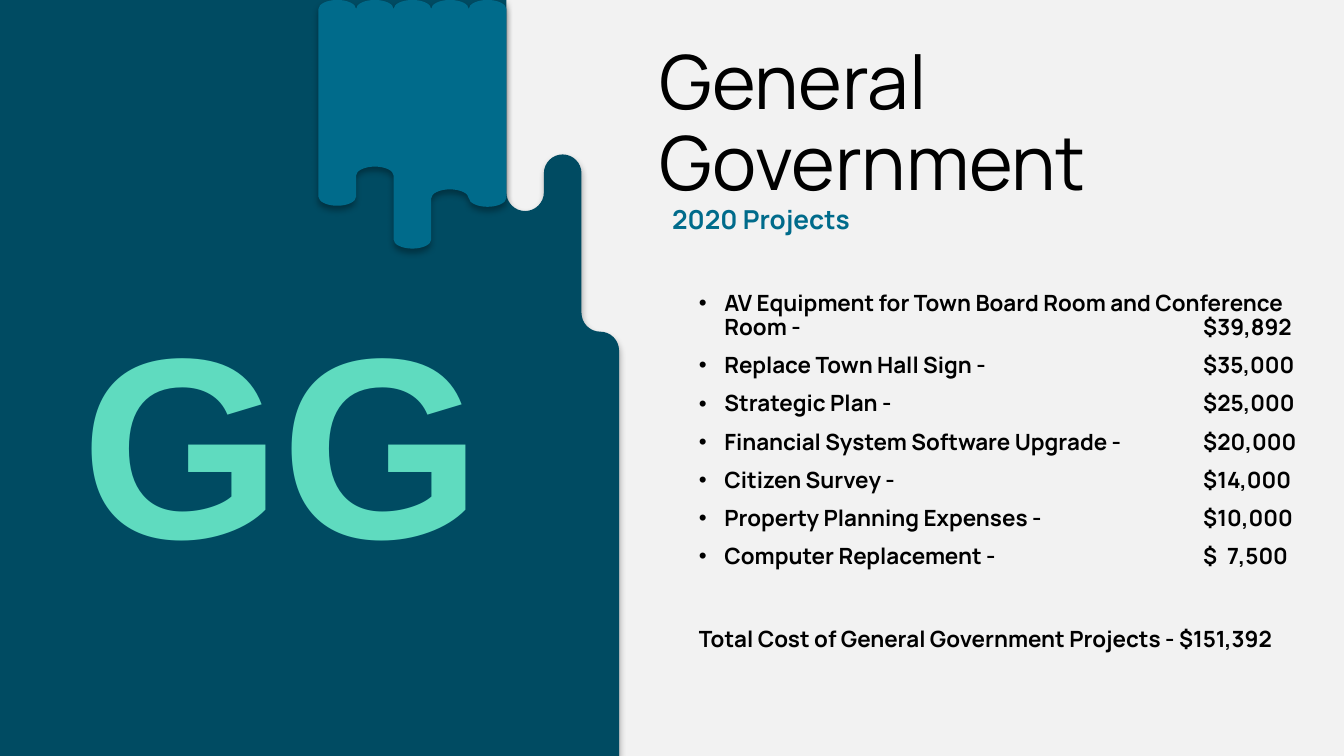
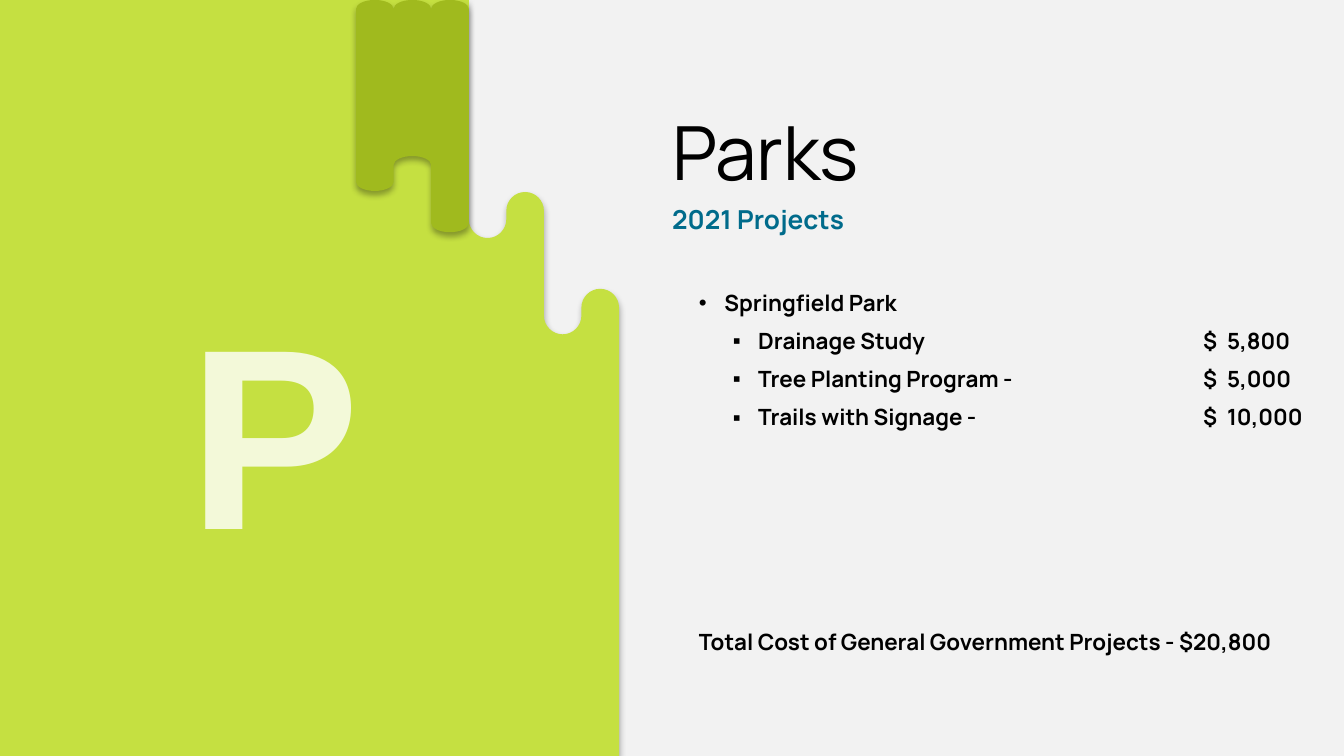
from dataclasses import dataclass

from lxml import etree
from pptx import Presentation
from pptx.dml.color import RGBColor as RGB
from pptx.enum.text import MSO_ANCHOR as ANCHOR, MSO_AUTO_SIZE as AUTO, PP_ALIGN as ALIGN
from pptx.oxml.ns import qn
from pptx.util import Cm, Pt


@dataclass(frozen=True)
class Theme:
    font: str = "Manrope"
    badge_font: str = "Arial"
    background: str = "F2F2F2"
    ink: str = "000000"
    accent: str = "006B8B"
    title: int = 40
    subtitle: int = 14
    body: int = 12
    badge: int = 138


THEME = Theme()
WIDTH, HEIGHT = 25.4, 14.29
COMPARISON = 4              # layout with a title, two headings and two lists
PANEL_RIGHT = 11.7
COLUMN = 0.71               # width of one drip
KAPPA = 0.55                # handle length of a quarter-ellipse curve
VALLEY, PEAK, STEP = "valley", "peak", "step"
AMOUNT_TABS = (9.53, 9.98)  # the amount, and its digits where they stand apart


def dome(x0, x1, tip, ry):
    """Half an ellipse from x0 to x1, as a line and two curves; a negative ry hangs down."""
    mid, rx, base = (x0 + x1) / 2, (x1 - x0) / 2, tip + ry
    shoulder, reach = base - KAPPA * ry, KAPPA * rx
    return [
        [(x0, base)],
        [(x0, shoulder), (mid - reach, tip), (mid, tip)],
        [(mid + reach, tip), (x1, shoulder), (x1, base)],
    ]


def add_outline(slide, segments, color):
    """Draw a closed outline; a segment of one point is a line, one of three a curve."""
    start, *rest = [(Cm(x), Cm(y)) for segment in segments for x, y in segment]
    builder = slide.shapes.build_freeform(*start)
    builder.add_line_segments(rest, close=True)
    sp = builder.convert_to_shape()
    lines = sp._element.iter(qn("a:lnTo"))
    bend(list(lines), segments[1:])
    sp.fill.solid()
    sp.fill.fore_color.rgb = RGB.from_string(color)
    sp.line.fill.background()
    add_shadow(sp)


def bend(lines, segments):
    """Join the three lines of each curved segment into one Bezier curve."""
    remaining = iter(lines)
    for segment in segments:
        first, *others = [next(remaining) for _ in segment]
        if others:
            curve = etree.Element(qn("a:cubicBezTo"))
            first.addprevious(curve)
            for line in (first, *others):
                curve.append(line[0])
                line.getparent().remove(line)


def add_shadow(sp):
    sp.shadow.inherit = False
    effects = sp._element.spPr.find(qn("a:effectLst"))
    shadow = etree.SubElement(effects, qn("a:outerShdw"), blurRad=str(Pt(3.5)),
                              dist=str(Pt(2.2)), dir="5400000", algn="t", rotWithShape="0")
    color = etree.SubElement(shadow, qn("a:srgbClr"), val="000000")
    etree.SubElement(color, qn("a:alpha"), val="32000")


def add_panel(slide, profile, color):
    """Left panel whose right edge follows the profile, one (kind, tip) per column."""
    left = PANEL_RIGHT - len(profile) * COLUMN
    radius = COLUMN / 2
    segments = [[(0, 0)], [(left, 0)]]
    for i, (kind, tip) in enumerate(profile):
        x0 = left + i * COLUMN
        valley = dome(x0, x0 + COLUMN, tip, -radius)
        peak = dome(x0, x0 + COLUMN, tip, radius)
        segments += {VALLEY: valley, PEAK: peak, STEP: valley[:2] + peak[2:]}[kind]
    add_outline(slide, segments + [[(PANEL_RIGHT, HEIGHT)], [(0, HEIGHT)]], color)
    return left


def add_drips(slide, right, tips, color, ry=0.17):
    """Paint drips ending at the given tips; every second one is hollowed upwards."""
    left = right - len(tips) * COLUMN
    edges = [left + i * COLUMN for i in range(len(tips) + 1)]
    segments = []
    for x0, x1 in zip(edges, edges[1:]):
        segments += dome(x0, x1, 0, ry)
    for i in reversed(range(len(tips))):
        segments += dome(edges[i + 1], edges[i], tips[i], ry if i % 2 else -ry)
    add_outline(slide, segments, color)


def write(p, text, size=THEME.body, color=THEME.ink, font=THEME.font, bold=True,
          spacing=0.9, before=0, bullet=None, margin=0, tabs=()):
    pPr = p._p.get_or_add_pPr()
    pPr.set("marL", str(Cm(margin)))
    pPr.set("indent", str(Cm(-0.48 if bullet else 0)))
    if bullet:
        etree.SubElement(pPr, qn("a:buFont"), typeface="Arial")
        etree.SubElement(pPr, qn("a:buChar"), char=bullet)
    else:
        etree.SubElement(pPr, qn("a:buNone"))
    if tabs:
        stops = etree.SubElement(pPr, qn("a:tabLst"))
        for pos in tabs:
            etree.SubElement(stops, qn("a:tab"), pos=str(Cm(pos)), algn="l")
    p.alignment = ALIGN.LEFT
    p.line_spacing = spacing
    p.space_before, p.space_after = Pt(before), Pt(0)
    r = p.add_run()
    r.text = text
    r.font.name, r.font.size, r.font.bold = font, Pt(size), bold
    r.font.color.rgb = RGB.from_string(color)


def place(sp, left, top, width, height, inset_y, inset_right=0):
    sp.left, sp.top, sp.width, sp.height = map(Cm, (left, top, width, height))
    tf = sp.text_frame
    tf.word_wrap, tf.auto_size, tf.vertical_anchor = True, AUTO.NONE, ANCHOR.TOP
    tf.margin_left, tf.margin_right = 0, Cm(inset_right)
    tf.margin_top = tf.margin_bottom = Cm(inset_y)
    return tf


def fill_list(tf, items):
    """Write (level, label, amount) items, with the amounts in a column of their own."""
    for i, (level, label, amount) in enumerate(items):
        p = tf.add_paragraph() if i else tf.paragraphs[0]
        p.level = level
        write(p, f"{label}\t{amount}" if amount else label, before=7.5 if i else 0,
              bullet="•▪"[level], margin=(0.48, 1.12)[level], tabs=AMOUNT_TABS)


def add_badge(slide, text, color, left, top, width):
    sp = slide.shapes.add_textbox(Cm(left), Cm(top), Cm(width), Cm(6.15))
    sp.text_frame.word_wrap = True
    write(sp.text_frame.paragraphs[0], text, size=THEME.badge, color=color,
          font=THEME.badge_font, spacing=1)


def add_project_slide(prs, title, title_box, subtitle, items, list_height, total, total_top):
    slide = prs.slides.add_slide(prs.slide_layouts[COMPARISON])
    ph = {sp.placeholder_format.idx: sp for sp in slide.placeholders}
    ph[4]._element.getparent().remove(ph[4]._element)
    write(place(ph[0], *title_box, 0.13, 0.25).paragraphs[0], title,
          size=THEME.title, bold=False)
    write(place(ph[1], 12.7, 3.78, 11.4, 0.61, 0.13, 0.25).paragraphs[0], subtitle,
          size=THEME.subtitle, color=THEME.accent)
    fill_list(place(ph[2], 13.21, 5.32, 11.84, list_height, 0.2), items)
    write(place(ph[3], 13.21, total_top, 10.9, 0.84, 0.2).paragraphs[0], total)
    return slide


def add_general_government(prs):
    items = [
        (0, "AV Equipment for Town Board Room and Conference Room -", "$39,892"),
        (0, "Replace Town Hall Sign -", "$35,000"),
        (0, "Strategic Plan -", "$25,000"),
        (0, "Financial System Software Upgrade -", "$20,000"),
        (0, "Citizen Survey -", "$14,000"),
        (0, "Property Planning Expenses -", "$10,000"),
        (0, "Computer Replacement -", "$\t7,500"),
    ]
    slide = add_project_slide(
        prs, "General Government", (12.47, 0.72, 13.08, 1.6), "2020 Projects", items, 4.65,
        "Total Cost of General Government Projects - $151,392", 11.67)
    edge = add_panel(slide, [(VALLEY, 3.99), (PEAK, 2.92), (STEP, 6.27)], "004B62")
    add_drips(slide, edge, [3.89, 3.15, 4.7, 3.58, 3.91], THEME.accent)
    add_badge(slide, "GG", "5FDBBF", 1.29, 5.18, 10.9)


def add_parks(prs):
    items = [
        (0, "Springfield Park", ""),
        (1, "Drainage Study", "$\t5,800"),
        (1, "Tree Planting Program -", "$\t5,000"),
        (1, "Trails with Signage -", "$\t10,000"),
    ]
    slide = add_project_slide(
        prs, "Parks", (12.7, 2.06, 11.4, 1.6), "2021 Projects", items, 5.56,
        "Total Cost of General Government Projects - $20,800", 11.73)
    edge = add_panel(slide, [(VALLEY, 4.5), (PEAK, 3.63), (VALLEY, 6.32), (PEAK, 5.46)],
                     "C5E041")
    add_drips(slide, edge, [3.61, 2.95, 4.39], "A0BA1E")
    add_badge(slide, "P", "F3F9D9", 3.32, 5.01, 4.67)


def main():
    prs = Presentation()
    prs.slide_width, prs.slide_height = Cm(WIDTH), Cm(HEIGHT)
    fill = prs.slide_master.background.fill
    fill.solid()
    fill.fore_color.rgb = RGB.from_string(THEME.background)
    add_general_government(prs)
    add_parks(prs)
    prs.save("out.pptx")


if __name__ == "__main__":
    main()
